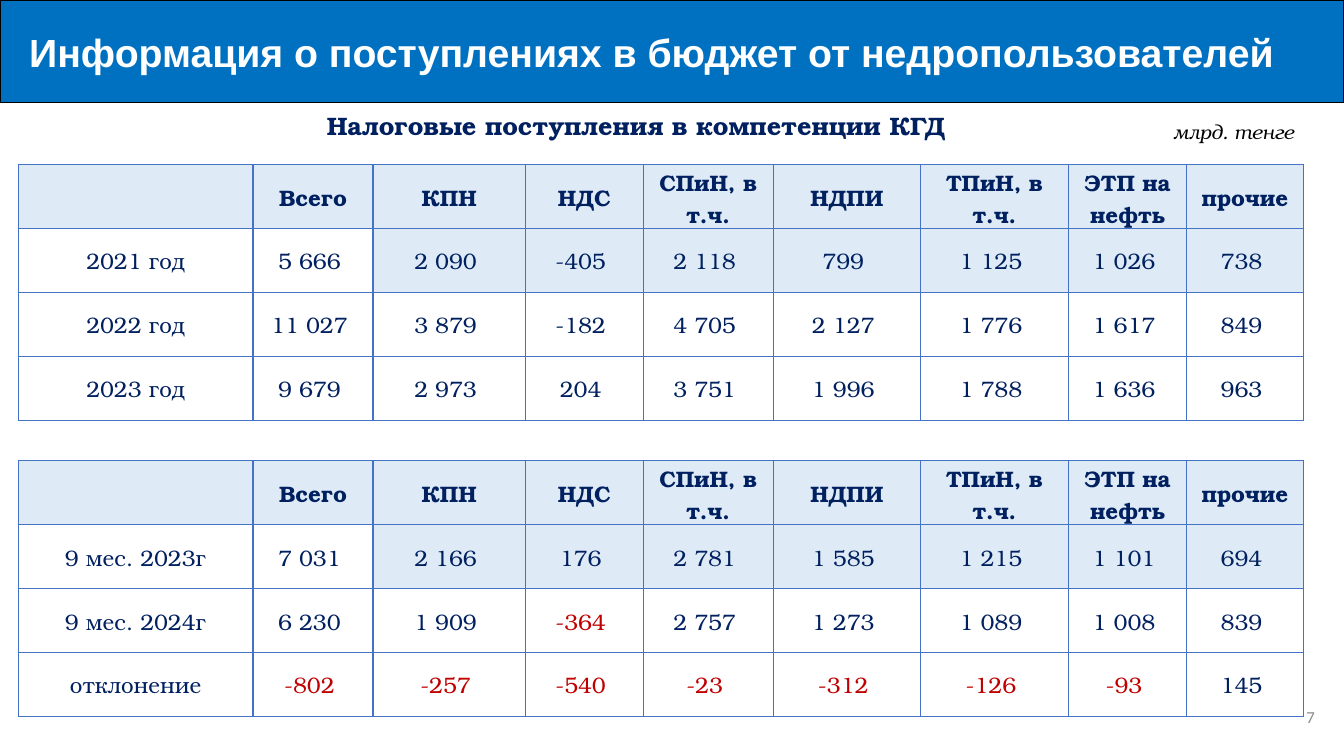
from lxml import etree
from pptx import Presentation
from pptx.dml.color import RGBColor
from pptx.enum.shapes import MSO_SHAPE
from pptx.enum.text import MSO_ANCHOR as ANCHOR, PP_ALIGN as ALIGN
from pptx.oxml.ns import qn
from pptx.util import Inches, Pt

# Content
TITLE = "Информация о поступлениях в бюджет от недропользователей"
SUBTITLE = "Налоговые поступления в компетенции КГД"
UNITS = "млрд. тенге"
PAGE = "7"
HEADERS = ["", "Всего", "КПН", "НДС", "СПиН, в т.ч.", "НДПИ",
           "ТПиН, в т.ч.", "ЭТП на нефть", "прочие"]
YEARS = [
    ("2021 год", 5666, 2090, -405, 2118, 799, 1125, 1026, 738),
    ("2022 год", 11027, 3879, -182, 4705, 2127, 1776, 1617, 849),
    ("2023 год", 9679, 2973, 204, 3751, 1996, 1788, 1636, 963),
]
NINE_MONTHS = [
    ("9 мес. 2023г", 7031, 2166, 176, 2781, 1585, 1215, 1101, 694),
    ("9 мес. 2024г", 6230, 1909, -364, 2757, 1273, 1089, 1008, 839),
    ("отклонение", -802, -257, -540, -23, -312, -126, -93, 145),
]

# Look and grid, in inches
COLORS = {"banner": "0070C0", "white": "FFFFFF", "black": "000000", "navy": "002060",
          "red": "C00000", "grid": "4472C4", "pale": "DEEBF7", "gray": "8C8C8C"}
SERIF = "TeX Gyre Bonum"
SLIDE_W, SLIDE_H = 13.33, 7.5
COLUMNS = [2.33, 1.19, 1.51, 1.17, 1.29, 1.46, 1.47, 1.17, 1.16]
ROW_H = 0.635
TABLE_LEFT = 0.18


def rgb(name):
    return RGBColor.from_string(COLORS[name])


def write(tf, text, size, color, font=SERIF, align=ALIGN.LEFT, bold=False, italic=False):
    p = tf.paragraphs[0]
    p.alignment = align
    r = p.add_run()
    r.text = text
    r.font.name, r.font.size = font, Pt(size)
    r.font.bold, r.font.italic = bold, italic
    r.font.color.rgb = rgb(color)


def add_text(slide, box, text, size, color, anchor=ANCHOR.TOP, **style):
    tf = slide.shapes.add_textbox(*map(Inches, box)).text_frame
    tf.word_wrap = True
    tf.vertical_anchor = anchor
    write(tf, text, size, color, **style)


def add_borders(cell):
    tc_pr = cell._tc.get_or_add_tcPr()
    for i, side in enumerate(("lnL", "lnR", "lnT", "lnB")):
        ln = etree.Element(qn(f"a:{side}"), w=str(Pt(1)))
        fill = etree.SubElement(ln, qn("a:solidFill"))
        etree.SubElement(fill, qn("a:srgbClr"), val=COLORS["grid"])
        tc_pr.insert(i, ln)


def add_revenue_table(slide, top, rows, mark_negative=False):
    rows = [HEADERS, *rows]
    frame = slide.shapes.add_table(
        len(rows), len(COLUMNS), Inches(TABLE_LEFT), Inches(top),
        Inches(sum(COLUMNS)), Inches(ROW_H * len(rows)))
    table = frame.table
    table.first_row = table.horz_banding = False
    for column, width in zip(table.columns, COLUMNS):
        column.width = Inches(width)
    for i, row in enumerate(rows):
        table.rows[i].height = Inches(ROW_H)
        for j, value in enumerate(row):
            cell = table.cell(i, j)
            cell.vertical_anchor = ANCHOR.MIDDLE
            cell.margin_left = cell.margin_right = cell.margin_top = Inches(0.01)
            cell.margin_bottom = 0
            # The header and the first row's breakdown are tinted
            if i == 0 or (i == 1 and j > 1):
                cell.fill.solid()
                cell.fill.fore_color.rgb = rgb("pale")
            else:
                cell.fill.background()
            add_borders(cell)
            is_number = isinstance(value, int)
            text = f"{value:,} ".replace(",", " ") if is_number else value
            color = "red" if mark_negative and is_number and value < 0 else "navy"
            if text:
                write(cell.text_frame, text, 16, color, align=ALIGN.CENTER, bold=i == 0)


def main():
    prs = Presentation()
    prs.slide_width, prs.slide_height = Inches(SLIDE_W), Inches(SLIDE_H)
    slide = prs.slides.add_slide(prs.slide_layouts[6])

    # Title banner
    banner = slide.shapes.add_shape(MSO_SHAPE.RECTANGLE, 0, 0, prs.slide_width, Inches(1.02))
    banner.shadow.inherit = False
    banner.fill.solid()
    banner.fill.fore_color.rgb = rgb("banner")
    banner.line.color.rgb = rgb("black")
    banner.line.width = Pt(1)
    tf = banner.text_frame
    tf.word_wrap = True
    tf.vertical_anchor = ANCHOR.MIDDLE
    tf.margin_left = Inches(0.29)
    write(tf, TITLE, 28, "white", font="Arial", bold=True)

    # Page number, subtitle and units
    add_text(slide, (10.14, 6.91, 3, 0.4), PAGE, 12, "gray", anchor=ANCHOR.MIDDLE,
             font="Calibri", align=ALIGN.RIGHT)
    add_text(slide, (1.09, 1.05, 10.44, 0.4), SUBTITLE, 18, "navy",
             align=ALIGN.CENTER, bold=True)
    add_text(slide, (11.53, 1.14, 1.8, 0.34), UNITS, 14, "black", italic=True)

    # Tables
    add_revenue_table(slide, 1.63, YEARS)
    add_revenue_table(slide, 4.57, NINE_MONTHS, mark_negative=True)

    prs.save("out.pptx")


if __name__ == "__main__":
    main()
